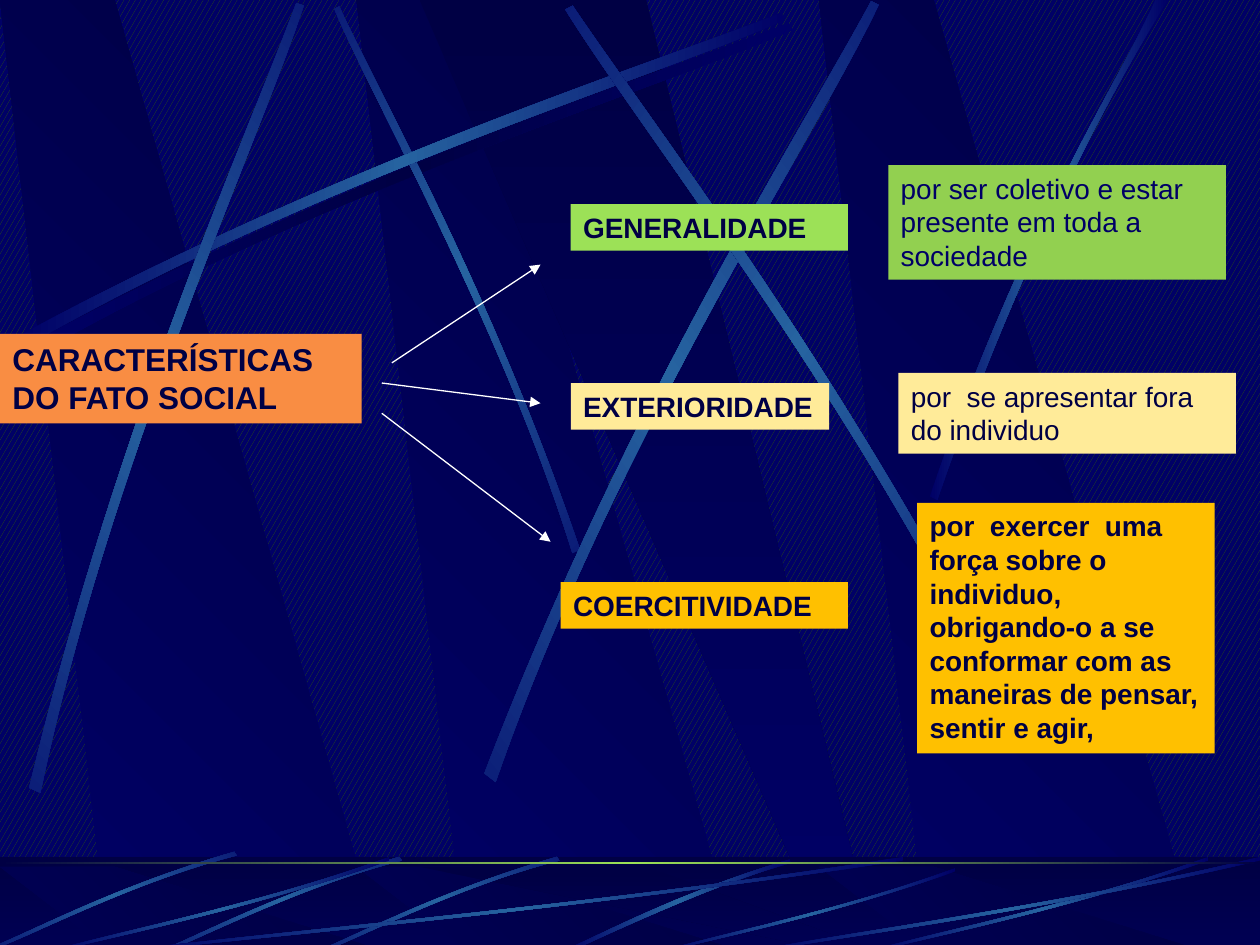
from copy import deepcopy
from math import cos, radians, sin

from lxml import etree
from pptx import Presentation
from pptx.dml.color import RGBColor
from pptx.enum.dml import MSO_PATTERN
from pptx.enum.shapes import MSO_CONNECTOR, MSO_SHAPE
from pptx.enum.text import MSO_AUTO_SIZE
from pptx.oxml.ns import qn
from pptx.util import Cm, Pt

CONFETTI = MSO_PATTERN.LARGE_CONFETTI
RECT = MSO_SHAPE.RECTANGLE
STRAIGHT = MSO_CONNECTOR.STRAIGHT
GROW = MSO_AUTO_SIZE.SHAPE_TO_FIT_TEXT

NAVY = RGBColor(0x00, 0x00, 0x66)
DARK = RGBColor(0x00, 0x00, 0x44)
BLUE = RGBColor(0x26, 0x63, 0xA0)
MOSS = RGBColor(0x2D, 0x55, 0x13)
LIME = RGBColor(0x9C, 0xE1, 0x57)
GREEN = RGBColor(0x92, 0xD0, 0x50)
ORANGE = RGBColor(0xF9, 0x8D, 0x43)
CREAM = RGBColor(0xFF, 0xEB, 0x99)
GOLD = RGBColor(0xFF, 0xC0, 0x00)
WHITE = RGBColor(0xFF, 0xFF, 0xFF)

WIDTH, HEIGHT = 10, 7.5
FLOOR, BLEED = 6.8, 7.55
GLOW = (NAVY, BLUE, NAVY)
SHADE = (NAVY, DARK, NAVY)

# Outlines: four curve points along one edge, then four points back.
ARC = [(0.14, 2.67), (2.78, 1.25), (5.18, 0.51), (6.2, 0.1),
       (6.23, 0.16), (5.22, 0.61), (2.48, 1.43), (0.17, 2.77)]
THIN = [(4.6, 4.36), (3.91, 2.34), (3.02, 0.77), (2.69, 0.05),
        (2.65, 0.07), (2.95, 0.79), (3.98, 2.58), (4.54, 4.39)]
# Each ray: outline, centre and angle of turn.
RAYS = [
    ([(0.23, 6.25), (0.93, 3.34), (1.97, 1.05), (2.35, 0.02),
      (2.41, 0.04), (2.07, 1.09), (0.86, 3.68), (0.32, 6.29)], (1.33, 3.16), 311.7),
    ([(3.85, 6.14), (4.98, 3.2), (6.38, 1.02), (6.92, 0.01),
      (6.98, 0.04), (6.49, 1.08), (4.86, 3.55), (3.94, 6.21)], (5.43, 3.1), 321.6),
    ([(8.06, 5.6), (6.7, 2.93), (5.16, 0.95), (4.55, 0.04),
      (4.49, 0.07), (5.07, 1.01), (6.85, 3.25), (7.99, 5.67)], (6.27, 2.86), 34.7),
]
FADE = [(7.38, 3.94), (8.14, 1.73), (8.88, 0.66), (9.17, 0),
        (9.27, 0), (8.36, 1.45), (7.69, 3.22), (7.44, 3.97)]
BLADE = [(6.27, 6.82), (5.37, 7.09), (4.77, 7.42), (4.48, 7.54),
         (4.53, 7.55), (4.9, 7.38), (5.71, 7), (6.28, 6.85)]
REED = [(4.42, 6.8), (3.55, 7.05), (2.87, 7.4), (2.56, 7.53),
        (2.57, 7.55), (2.88, 7.43), (3.65, 7.03), (4.44, 6.83)]
SWEEP = [(1, 0.04), (0.57, 0.57), (0.17, 0.85), (0.01, 1),
         (0, 0.99), (0.17, 0.81), (0.62, 0.5), (1, 0)]
BAND = [(0.86, 1), (3.02, 1), (0.91, 0), (0, 0)]
WEDGE = [(3.33, 0), (6.58, 1), (6.94, 1), (5.13, 0)]


def size(value):
    """Turn inches on the slide grid into a length."""
    return Cm(value * 2.54)


def place(points, left=0, top=0, wide=1, high=1):
    return [(left + x * wide, top + y * high) for x, y in points]


def unturn(points, mid, angle):
    """Turn points back about a centre."""
    c, s = cos(radians(angle)), sin(radians(angle))
    moved = place(points, -mid[0], -mid[1])
    return place([(x * c + y * s, y * c - x * s) for x, y in moved], *mid)


def blend(shape, shades, angle):
    """Fill a shape with evenly spaced gradient stops."""
    fill = shape.fill
    fill.gradient()
    fill.gradient_angle = angle
    stops = shape._element.spPr.find(".//" + qn("a:gsLst"))
    for _ in shades[2:]:
        stops.append(deepcopy(stops[0]))
    for rank, (stop, shade) in enumerate(zip(fill.gradient_stops, shades)):
        stop.color.rgb = shade
        stop.position = rank / (len(shades) - 1)


def curve(shape):
    """Make cubic curves of the two long edges of an outline."""
    lines = shape._element.findall(".//" + qn("a:lnTo"))
    for edge in (lines[:3], lines[4:]):
        cubic = etree.Element(qn("a:cubicBezTo"))
        edge[0].addprevious(cubic)
        for line in edge:
            cubic.append(line[0])
            line.getparent().remove(line)


def write(frame, text, points=16, bold=True, color=DARK, font="Arial"):
    frame.word_wrap = True
    frame.auto_size = GROW
    run = frame.paragraphs[0].add_run()
    run.text = text
    run.font.name = font
    run.font.size = Pt(points)
    run.font.bold = bold
    run.font.color.rgb = color


class Board:
    def __init__(self, slide):
        self.shapes = slide.shapes
        fill = slide.background.fill
        fill.patterned()
        fill.pattern = CONFETTI
        fill.fore_color.rgb = MOSS
        fill.back_color.rgb = NAVY

    def form(self, points, shades, angle=0):
        spots = [(size(x), size(y)) for x, y in points]
        pen = self.shapes.build_freeform(*spots[0], scale=1.0)
        pen.add_line_segments(spots[1:], close=True)
        shape = pen.convert_to_shape()
        shape.shadow.inherit = False
        shape.line.fill.background()
        blend(shape, shades, angle)
        return shape

    def streak(self, points, mid=(0, 0), turn=0, shades=GLOW):
        shape = self.form(unturn(points, mid, turn), shades)
        curve(shape)
        shape.rotation = turn

    def bands(self, top, high):
        for left in (2.83, 0, 6.5):
            self.form(place(BAND, left, top, high=high), (NAVY, DARK), 45)
        self.form(place(WEDGE, 0, top, high=high), (DARK, NAVY), 270)

    def strip(self, top, high, shades, angle=0, alpha=None):
        shape = self.shapes.add_shape(RECT, 0, size(top), size(WIDTH), size(high))
        shape.shadow.inherit = False
        shape.line.fill.background()
        if alpha is None:
            blend(shape, shades, angle)
            return
        shape.fill.solid()
        shape.fill.fore_color.rgb = shades[0]
        tint = shape._element.spPr.find(".//" + qn("a:srgbClr"))
        etree.SubElement(tint, qn("a:alpha"), val=str(alpha * 1000))

    def box(self, spot, fill, text, **style):
        shape = self.shapes.add_textbox(*map(size, spot))
        shape.fill.solid()
        shape.fill.fore_color.rgb = fill
        write(shape.text_frame, text, **style)

    def arrow(self, start, end):
        line = self.shapes.add_connector(STRAIGHT, *map(size, start + end))
        line.line.color.rgb = WHITE
        line.line.width = Pt(0.75)
        etree.SubElement(line.line._get_or_add_ln(), qn("a:tailEnd"), type="triangle")
        etree.SubElement(line._element.spPr, qn("a:effectLst"))


def main():
    deck = Presentation()
    deck.slide_width, deck.slide_height = size(WIDTH), size(HEIGHT)
    board = Board(deck.slides.add_slide(deck.slide_layouts[6]))

    board.bands(0, 7.52)
    board.streak(place(ARC, 0.06, 0.08), shades=SHADE)
    board.streak(THIN, (3.62, 2.22), 45)
    board.streak(ARC)
    for ray in RAYS:
        board.streak(*ray)
    board.streak(FADE)

    board.strip(FLOOR, BLEED - FLOOR, (DARK, NAVY), 270)
    board.bands(6.88, 0.66)
    board.strip(FLOOR, BLEED - FLOOR, (DARK,), alpha=50)
    board.streak(BLADE)
    for left, top in ((0, 0), (-1.25, 0), (-2.56, -0.04)):
        board.streak(place(REED, left, top), (3.5 + left, 7.18 + top), 315)
    for left, top, wide in ((1, FLOOR, 6.17), (0.42, FLOOR, 2.67), (5.27, 6.89, 2.31),
                            (6.92, FLOOR, 2.67), (6, FLOOR, 4)):
        board.streak(place(SWEEP, left, top, wide, BLEED - top))
    board.strip(6.84, 0.02, (DARK, LIME, DARK))

    board.box((0, 2.65, 2.87, 0.71), ORANGE, "CARACTERÍSTICAS DO FATO SOCIAL", points=18)
    board.box((4.53, 1.62, 2.2, 0.37), LIME, "GENERALIDADE")
    board.box((4.53, 3.04, 2.05, 0.37), CREAM, "EXTERIORIDADE")
    board.box((4.45, 4.62, 2.28, 0.37), GOLD, "COERCITIVIDADE")
    board.arrow((3.11, 2.88), (4.29, 2.1))
    board.arrow((3.03, 3.04), (4.29, 3.2))
    board.arrow((3.03, 3.28), (4.37, 4.3))
    board.box((7.05, 1.31, 2.68, 0.91), GREEN,
              "por ser coletivo e estar presente em toda a sociedade", bold=False, color=NAVY)
    board.box((7.13, 2.96, 2.68, 0.64), CREAM,
              "por  se apresentar fora do individuo", bold=False)
    board.box((7.28, 3.99, 2.36, 1.99), GOLD,
              "por  exercer  uma força sobre o individuo, obrigando-o a se "
              "conformar com as maneiras de pensar, sentir e agir,")
    deck.save("out.pptx")


if __name__ == "__main__":
    main()
